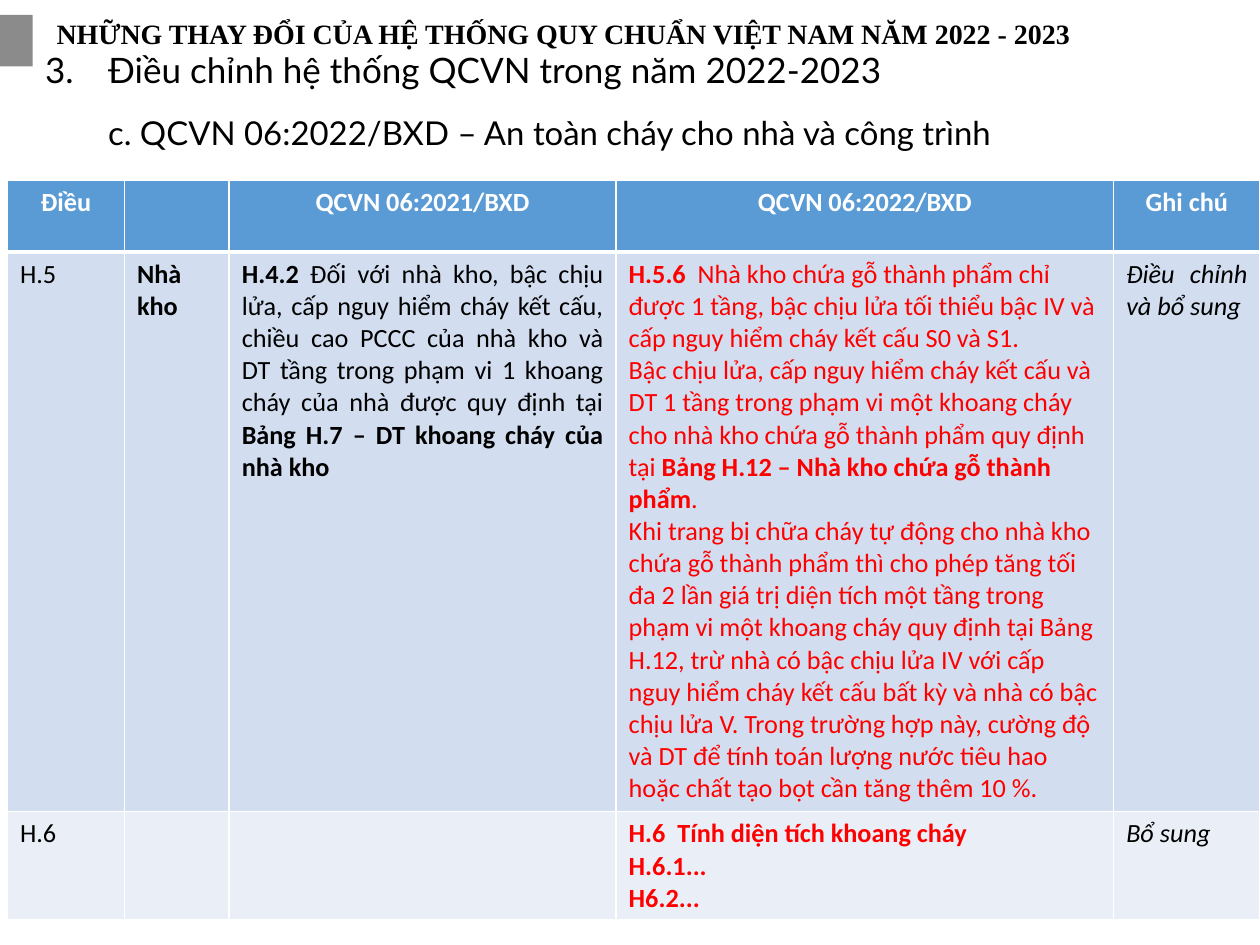
from lxml.etree import SubElement
from pptx import Presentation
from pptx.dml.color import RGBColor
from pptx.enum.shapes import MSO_SHAPE
from pptx.enum.text import PP_ALIGN
from pptx.oxml.ns import qn
from pptx.util import Cm, Pt

COLORS = {
    "text": "000000", "changed": "FF0000", "white": "FFFFFF", "marker": "808080",
    "header": "5B9BD5", "band_dark": "D2DEEF", "band_light": "EAEFF7",
}
COLUMN_WIDTHS = [2.36, 2.11, 7.8, 10.03, 2.95]
ROW_HEIGHTS = [1.45, 11.28, 2.18]
ROW_FILLS = ["header", "band_dark", "band_light"]

# A cell is a list of paragraphs, a paragraph a list of (text, bold) spans.
HEADINGS = ["Điều", "", "QCVN 06:2021/BXD", "QCVN 06:2022/BXD", "Ghi chú"]
ROWS = [
    [[[(heading, True)]] if heading else [] for heading in HEADINGS],
    [
        [[("H.5", False)]],
        [[("Nhà kho", True)]],
        [[("H.4.2", True),
          (" Đối với nhà kho, bậc chịu lửa, cấp nguy hiểm cháy kết cấu, chiều cao PCCC "
           "của nhà kho và DT tầng trong phạm vi 1 khoang cháy của nhà được quy định tại ",
           False),
          ("Bảng H.7 – DT khoang cháy của nhà kho", True)]],
        [[("H.5.6", True),
          ("  Nhà kho chứa gỗ thành phẩm chỉ được 1 tầng, bậc chịu lửa tối thiểu bậc IV "
           "và cấp nguy hiểm cháy kết cấu S0 và S1.", False)],
         [("Bậc chịu lửa, cấp nguy hiểm cháy kết cấu và DT 1 tầng trong phạm vi một khoang "
           "cháy cho nhà kho chứa gỗ thành phẩm quy định tại ", False),
          ("Bảng H.12 – Nhà kho chứa gỗ thành phẩm", True),
          (".", False)],
         [("Khi trang bị chữa cháy tự động cho nhà kho chứa gỗ thành phẩm thì cho phép tăng "
           "tối đa 2 lần giá trị diện tích một tầng trong phạm vi một khoang cháy quy định "
           "tại Bảng H.12, trừ nhà có bậc chịu lửa IV với cấp nguy hiểm cháy kết cấu bất kỳ "
           "và nhà có bậc chịu lửa V. Trong trường hợp này, cường độ và DT để tính toán "
           "lượng nước tiêu hao hoặc chất tạo bọt cần tăng thêm 10 %.", False)]],
        [[("Điều chỉnh và bổ sung", False)]],
    ],
    [
        [[("H.6", False)]],
        [],
        [],
        [[("H.6  Tính diện tích khoang cháy", True)],
         [("H.6.1...", True)],
         [("H6.2...", True)]],
        [[("Bổ sung", False)]],
    ],
]


def color(name):
    return RGBColor.from_string(COLORS[name])


def set_font(font, name, size, color_name):
    font.name, font.size = name, Pt(size)
    font.color.rgb = color(color_name)


def add_marker(page, left, top, width, height):
    marker = page.shapes.add_shape(
        MSO_SHAPE.RECTANGLE, Cm(left), Cm(top), Cm(width), Cm(height))
    marker.shadow.inherit = False
    marker.line.fill.background()
    marker.fill.solid()
    marker.fill.fore_color.rgb = color("marker")
    shade = marker.fill._xPr.find(qn("a:solidFill"))[0]
    SubElement(shade, qn("a:alpha"), val="91000")


def add_line(page, box, text, font_name, size, spacing, bold=False, number=None):
    """Add a one-paragraph text box, numbered when a number is given."""
    frame = page.shapes.add_textbox(*map(Cm, box)).text_frame
    frame.word_wrap = True
    para = frame.paragraphs[0]
    para.text = text
    para.line_spacing = spacing
    if number:
        properties = para._p.get_or_add_pPr()
        properties.set("marL", str(Cm(1.27)))
        properties.set("indent", str(-Cm(1.27)))
        SubElement(properties, qn("a:buAutoNum"), type="arabicPeriod", startAt=str(number))
    set_font(para.font, font_name, size, "text")
    para.font.bold = bold


def add_headings(page, left, top):
    add_line(page, (left, top + 0.66, 22.07, 0.89),
             "Điều chỉnh hệ thống QCVN trong năm 2022-2023", "Lato", 20, 0.9, number=3)
    add_line(page, (left + 0.23, top, 22.71, 1.07),
             "NHỮNG THAY ĐỔI CỦA HỆ THỐNG QUY CHUẨN VIỆT NAM NĂM 2022 - 2023",
             "Times New Roman", 16, 0.9, bold=True)
    add_line(page, (left + 1.27, top + 1.47, 18.8, 1.3),
             "c. QCVN 06:2022/BXD – An toàn cháy cho nhà và công trình", "Lato", 18.8, 1.5)


def set_borders(cell, widths):
    properties = cell._tc.get_or_add_tcPr()
    for side, width in zip("LRTB", widths):
        line = SubElement(properties, qn(f"a:ln{side}"), w=str(Pt(width)))
        fill = SubElement(line, qn("a:solidFill"))
        SubElement(fill, qn("a:srgbClr"), val=COLORS["white"])


def fill_cell(cell, paragraphs, row, column):
    set_borders(cell, (1, 1, 3 if row == 1 else 1, 3 if row == 0 else 1))
    cell.fill.solid()
    cell.fill.fore_color.rgb = color(ROW_FILLS[row])
    if row == 0:
        alignment, color_name = PP_ALIGN.CENTER, "white"
    else:
        alignment = PP_ALIGN.JUSTIFY if column in (1, 2, 4) else PP_ALIGN.LEFT
        color_name = "changed" if column == 3 else "text"
    frame = cell.text_frame
    for index, spans in enumerate(paragraphs):
        para = frame.add_paragraph() if index else frame.paragraphs[0]
        para.alignment = alignment
        set_font(para.font, "Calibri", 15, color_name)
        para.font.italic = row > 0 and column == 4
        for text, bold in spans:
            span = para.add_run()
            span.text = text
            span.font.bold = bold


def add_comparison(page, left, top):
    table = page.shapes.add_table(
        len(ROWS), len(COLUMN_WIDTHS), Cm(left), Cm(top),
        Cm(sum(COLUMN_WIDTHS)), Cm(sum(ROW_HEIGHTS))).table
    for column, width in zip(table.columns, COLUMN_WIDTHS):
        column.width = Cm(width)
    for row, height in zip(table.rows, ROW_HEIGHTS):
        row.height = Cm(height)
    for row, cells in enumerate(ROWS):
        for column, paragraphs in enumerate(cells):
            fill_cell(table.cell(row, column), paragraphs, row, column)


def main():
    deck = Presentation()
    deck.slide_width, deck.slide_height = Cm(25.4), Cm(19.05)
    page = deck.slides.add_slide(deck.slide_layouts[6])
    add_marker(page, 0, 0.3, 0.66, 1.04)
    add_headings(page, 0.66, 0.28)
    add_comparison(page, 0.15, 3.63)
    deck.save("out.pptx")


if __name__ == "__main__":
    main()
